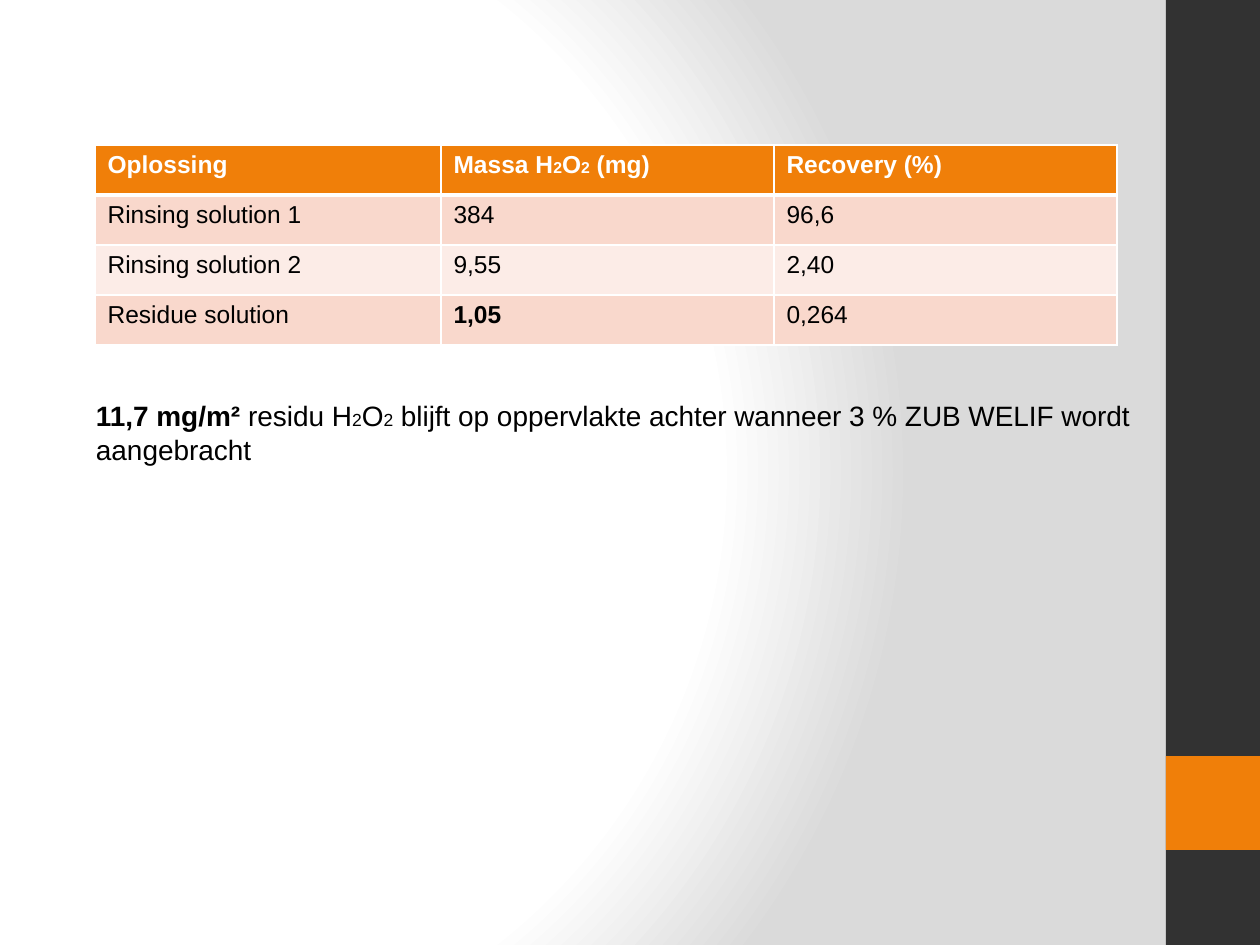
from pptx import Presentation
from pptx.dml.color import RGBColor
from pptx.enum.shapes import MSO_SHAPE as Shape
from pptx.oxml import parse_xml
from pptx.oxml.ns import nsdecls
from pptx.util import Emu, Pt

SCALE = 914400 / 126
FONT = "Arial"
WHITE = RGBColor(0xFF, 0xFF, 0xFF)
BLACK = RGBColor(0x00, 0x00, 0x00)
GREY = RGBColor(0xDA, 0xDA, 0xDA)
DARK = RGBColor(0x32, 0x32, 0x32)
ORANGE = RGBColor(0xF0, 0x7F, 0x09)
ROSE = RGBColor(0xF9, 0xD8, 0xCC)
PALE_ROSE = RGBColor(0xFC, 0xEC, 0xE7)

COLUMN_WIDTHS = [346, 333, 343]
ROWS = [
    ["Oplossing", "Massa H2O2 (mg)", "Recovery (%)"],
    ["Rinsing solution 1", "384", "96,6"],
    ["Rinsing solution 2", "9,55", "2,40"],
    ["Residue solution", "1,05", "0,264"],
]
BOLD_RESULT = "1,05"
PEROXIDE = "H2O2"


def px(length):
    return Emu(round(length * SCALE))


def add_text(paragraph, text, size=14, small=9, color=BLACK, bold=False):
    before, formula, after = text.partition(PEROXIDE)
    parts = [(before, size)]
    if formula:
        parts = [(before + "H", size), ("2", small), ("O", size), ("2", small), (after, size)]
    for part, part_size in parts:
        run = paragraph.add_run()
        run.text = part
        run.font.name = FONT
        run.font.size = Pt(part_size)
        run.font.bold = bold
        run.font.color.rgb = color


def set_background(slide):
    stops = "".join(
        f'<a:gs pos="{position * 1000}"><a:srgbClr val="{color}"/></a:gs>'
        for position, color in [(0, WHITE), (75, WHITE), (100, GREY)]
    )
    background = parse_xml(
        f'<p:bg {nsdecls("p", "a")}><p:bgPr><a:gradFill rotWithShape="1">'
        f'<a:gsLst>{stops}</a:gsLst><a:path path="circle">'
        '<a:fillToRect l="20000" t="50000" r="100000" b="50000"/></a:path>'
        '</a:gradFill><a:effectLst/></p:bgPr></p:bg>'
    )
    slide.element.cSld.insert(0, background)


def add_block(slide, left, top, width, height, color):
    block = slide.shapes.add_shape(Shape.RECTANGLE, px(left), px(top), px(width), px(height))
    block.shadow.inherit = False
    block.fill.solid()
    block.fill.fore_color.rgb = color
    block.line.fill.background()


def add_sidebar(slide, left, top, width, height):
    add_block(slide, left, top, width, height, DARK)
    add_block(slide, left, top + height * 4 // 5, width, height // 10, ORANGE)


def set_borders(cell, **widths):
    properties = cell._tc.get_or_add_tcPr()
    for index, side in enumerate("LRTB"):
        line = parse_xml(
            f'<a:ln{side} {nsdecls("a")} w="{Pt(widths.get(side, 1))}">'
            f'<a:solidFill><a:srgbClr val="{WHITE}"/></a:solidFill></a:ln{side}>'
        )
        properties.insert(index, line)


def add_recovery_table(slide, left, top, row_height):
    frame = slide.shapes.add_table(
        len(ROWS), len(COLUMN_WIDTHS), px(left), px(top),
        px(sum(COLUMN_WIDTHS)), px(row_height * len(ROWS)),
    )
    table = frame.table
    for column, width in zip(table.columns, COLUMN_WIDTHS):
        column.width = px(width)
    for row_index, texts in enumerate(ROWS):
        header = row_index == 0
        fill = ORANGE if header else (ROSE if row_index % 2 else PALE_ROSE)
        for column_index, text in enumerate(texts):
            cell = table.cell(row_index, column_index)
            cell.fill.solid()
            cell.fill.fore_color.rgb = fill
            set_borders(cell, T=3 if row_index == 1 else 1, B=3 if header else 1)
            add_text(
                cell.text_frame.paragraphs[0], text,
                color=WHITE if header else BLACK, bold=header or text == BOLD_RESULT,
            )


def add_conclusion(slide, left, top, width, height):
    box = slide.shapes.add_textbox(px(left), px(top), px(width), px(height))
    frame = box.text_frame
    frame.word_wrap = True
    frame.margin_left = frame.margin_right = 0
    frame.margin_top = frame.margin_bottom = px(6)
    paragraph = frame.paragraphs[0]
    paragraph.space_before = Pt(7)
    paragraph._p.get_or_add_pPr().set("marL", str(px(9)))
    add_text(paragraph, "11,7 mg/m² ", size=16, bold=True)
    add_text(
        paragraph,
        "residu H2O2 blijft op oppervlakte achter wanneer 3 % ZUB WELIF wordt aangebracht",
        size=16, small=10,
    )


def main():
    presentation = Presentation()
    presentation.slide_width = px(1260)
    presentation.slide_height = px(945)
    slide = presentation.slides.add_slide(presentation.slide_layouts[6])
    set_background(slide)
    add_sidebar(slide, 1166, 0, 94, 945)
    add_recovery_table(slide, 95, 145, 50)
    add_conclusion(slide, 87, 393, 1071, 195)
    presentation.save("out.pptx")


if __name__ == "__main__":
    main()
